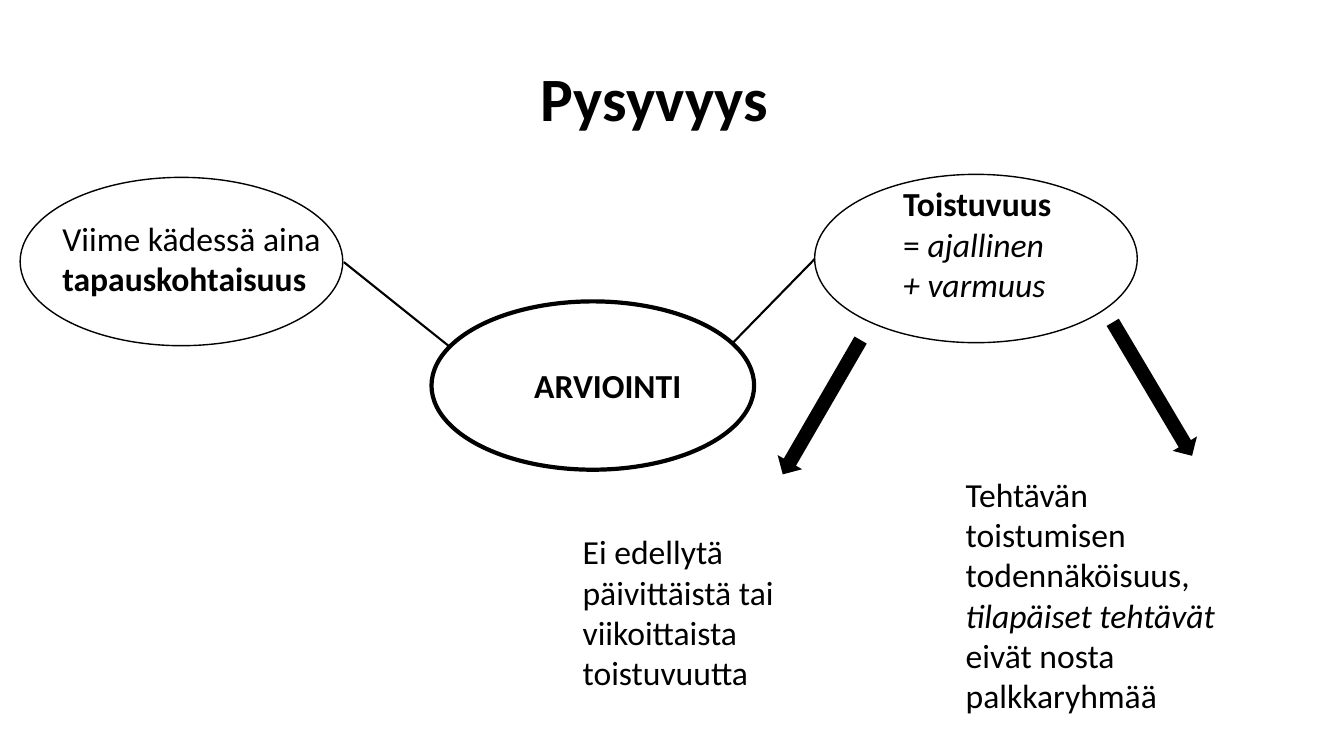
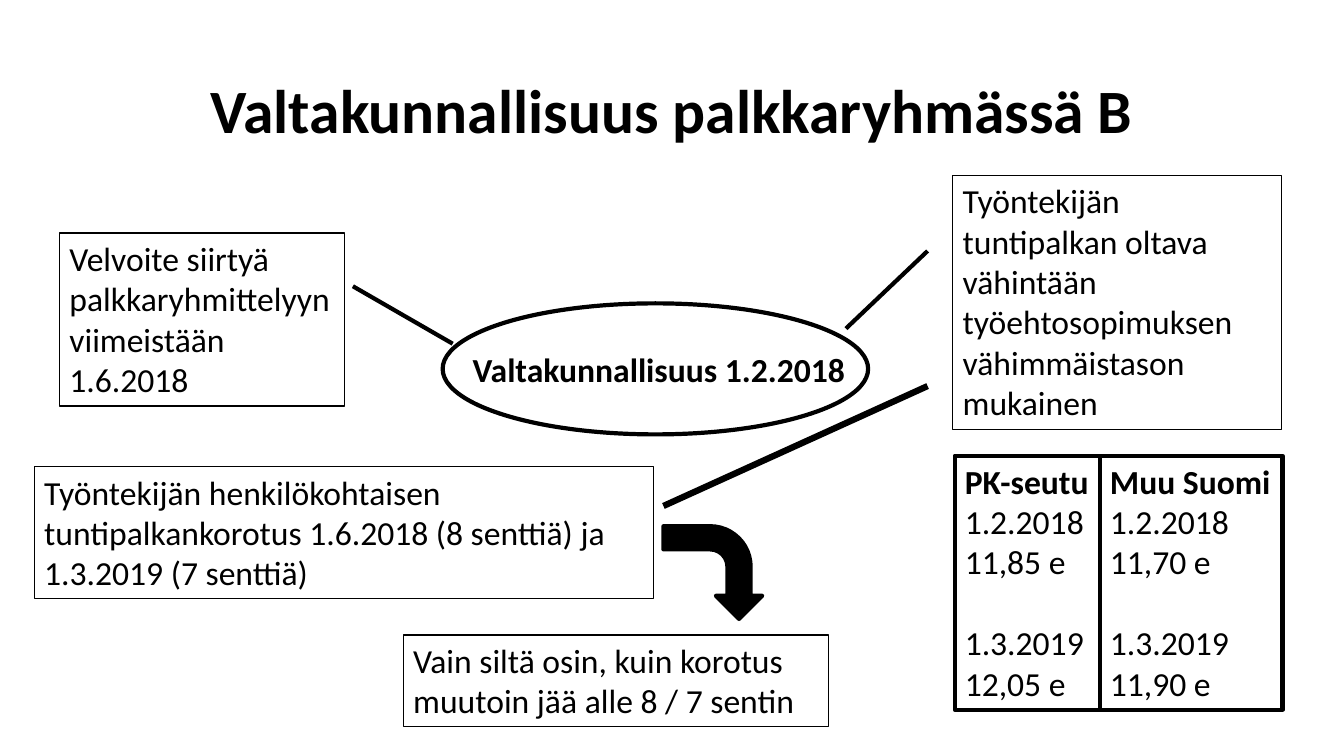
from dataclasses import dataclass

from lxml import etree
from pptx import Presentation, util as u
from pptx.dml import color
from pptx.enum import shapes, text
from pptx.oxml import ns


@dataclass(frozen=True)
class Theme:
    ink: color.RGBColor = color.RGBColor(0, 0, 0)
    paper: color.RGBColor = color.RGBColor(255, 255, 255)
    font: str = "Calibri"
    title_size: int = 44
    body_size: int = 24
    blank_line: int = 29
    thin: float = 1
    medium: float = 1.5
    thick: float = 3
    heavy: float = 4.5


THEME = Theme()
EMU_PER_PX = 9144
SLIDE_SIZE = (1333, 750)
TITLE_SIZE = (1150, 145)
BUBBLE_SIZE = (320, 167)
ARROW_SIZE = (28, 154)
PLAIN, BOLD, ITALIC = {}, {"bold": True}, {"italic": True}


def px(*lengths):
    return [u.Emu(length * EMU_PER_PX) for length in lengths]


def set_attributes(target, values):
    for name, value in values.items():
        setattr(target, name, value)


def set_line(line, width):
    line.color.rgb = THEME.ink
    line.width = u.Pt(width)


def add_text(slide, box, paragraphs, size=THEME.body_size, wrap=True,
             frame_format=PLAIN, paragraph_formats=PLAIN):
    shape = slide.shapes.add_textbox(*px(*box))
    frame = shape.text_frame
    set_attributes(frame, {"word_wrap": wrap, **frame_format})
    for index, runs in enumerate(paragraphs):
        paragraph = frame.paragraphs[0] if index == 0 else frame.add_paragraph()
        set_attributes(paragraph, paragraph_formats.get(index, PLAIN))
        for wording, style in runs:
            run = paragraph.add_run()
            run.text = wording
            run.font.color.rgb = THEME.ink
            set_attributes(run.font, {"name": THEME.font, "size": u.Pt(size), **style})
    return shape


def add_title(slide, left, top, wording):
    add_text(slide, (left, top, *TITLE_SIZE), [[(wording, BOLD)]], THEME.title_size,
             frame_format={"vertical_anchor": text.MSO_ANCHOR.MIDDLE},
             paragraph_formats={0: {"alignment": text.PP_ALIGN.CENTER,
                                    "line_spacing": 0.9}})


def add_framed_text(slide, box, paragraphs, width=THEME.thin, **options):
    shape = add_text(slide, box, paragraphs, **options)
    shape.fill.solid()
    shape.fill.fore_color.rgb = THEME.paper
    set_line(shape.line, width)


def add_preset(slide, kind, box, fill, width=None, rotation=0):
    shape = slide.shapes.add_shape(kind, *px(*box))
    shape.shadow.inherit = False
    shape.rotation = rotation
    shape.fill.solid()
    shape.fill.fore_color.rgb = fill
    if width:
        set_line(shape.line, width)
    else:
        shape.line.fill.background()


def add_bubble(slide, box, width, label_box, paragraphs):
    add_preset(slide, shapes.MSO_SHAPE.OVAL, box, THEME.paper, width)
    add_text(slide, label_box, paragraphs, wrap=False)


def add_line(slide, start, end, width):
    connector = slide.shapes.add_connector(
        shapes.MSO_CONNECTOR.STRAIGHT, *px(*start, *end))
    set_line(connector.line, width)
    properties = connector._element.find(ns.qn("p:spPr"))
    etree.SubElement(properties, ns.qn("a:effectLst"))


def build_permanence(slide):
    add_title(slide, 74, 28, "Pysyvyys")
    add_bubble(slide, (428, 299, *BUBBLE_SIZE), THEME.thick,
               (520, 357, 167, 50), [[("ARVIOINTI", BOLD)]])
    add_bubble(slide, (20, 176, *BUBBLE_SIZE), THEME.thin, (52, 211, 286, 91),
               [[("Viime kädessä aina", PLAIN)], [("tapauskohtaisuus", BOLD)]])
    add_bubble(slide, (808, 173, *BUBBLE_SIZE), THEME.thin, (886, 177, 169, 131),
               [[("Toistuvuus", BOLD)],
                [("= ", PLAIN), ("ajallinen", ITALIC)],
                [("+ varmuus", ITALIC)]])
    for start, end in (((341, 260), (446, 344)), ((726, 341), (808, 257))):
        add_line(slide, start, end, THEME.medium)
    for left, top, rotation in ((801, 327, 30.1), (1129, 309, 329.3)):
        add_preset(slide, shapes.MSO_SHAPE.DOWN_ARROW, (left, top, *ARROW_SIZE),
                   THEME.ink, rotation=rotation)
    add_text(slide, (568, 522, 271, 172),
             [[("Ei edellytä päivittäistä tai viikoittaista toistuvuutta", PLAIN)]])
    add_text(slide, (948, 465, 290, 252),
             [[("Tehtävän toistumisen todennäköisuus,", PLAIN)],
              [("tilapäiset tehtävät ", ITALIC), ("eivät nosta palkkaryhmää", PLAIN)]])


def build_nationwide(slide):
    add_title(slide, 92, 40, "Valtakunnallisuus palkkaryhmässä B")
    add_bubble(slide, (439, 301, 422, 130), THEME.thick,
               (459, 341, 393, 50), [[("Valtakunnallisuus 1.2.2018", BOLD)]])
    notes = (
        ((59, 231, 283, 172),
         "Velvoite siirtyä palkkaryhmittelyyn viimeistään 1.6.2018"),
        ((945, 174, 326, 252),
         "Työntekijän tuntipalkan oltava vähintään työehtosopimuksen "
         "vähimmäistason mukainen"),
        ((34, 463, 614, 131),
         "Työntekijän henkilökohtaisen tuntipalkankorotus 1.6.2018 (8 senttiä) ja "
         "1.3.2019 (7 senttiä)"),
        ((400, 630, 422, 91),
         "Vain siltä osin, kuin korotus muutoin jää alle 8 / 7 sentin"),
    )
    for box, wording in notes:
        add_framed_text(slide, box, [[(wording, PLAIN)]])
    wages = (
        (947, 145, "PK-seutu", "11,85 e", "12,05 e"),
        (1091, 181, "Muu Suomi", "11,70 e", "11,90 e"),
    )
    for left, width, region, first_wage, second_wage in wages:
        rows = ("1.2.2018", first_wage, "1.3.2019", second_wage)
        add_framed_text(slide, (left, 452, width, 252),
                        [[(region, BOLD)], *([(row, PLAIN)] for row in rows)],
                        THEME.thick, wrap=False,
                        paragraph_formats={3: {"space_before": u.Pt(THEME.blank_line)}})
    add_preset(slide, shapes.MSO_SHAPE.BENT_ARROW, (661, 519, 92, 98),
               THEME.ink, THEME.thick, rotation=90)
    lines = (
        ((350, 284), (449, 341), THEME.thick),
        ((839, 326), (920, 249), THEME.thick),
        ((658, 502), (920, 383), THEME.heavy),
    )
    for start, end, width in lines:
        add_line(slide, start, end, width)


def main():
    presentation = Presentation()
    presentation.slide_width, presentation.slide_height = px(*SLIDE_SIZE)
    blank = presentation.slide_layouts[6]
    for build in (build_permanence, build_nationwide):
        build(presentation.slides.add_slide(blank))
    presentation.save("out.pptx")


if __name__ == "__main__":
    main()
